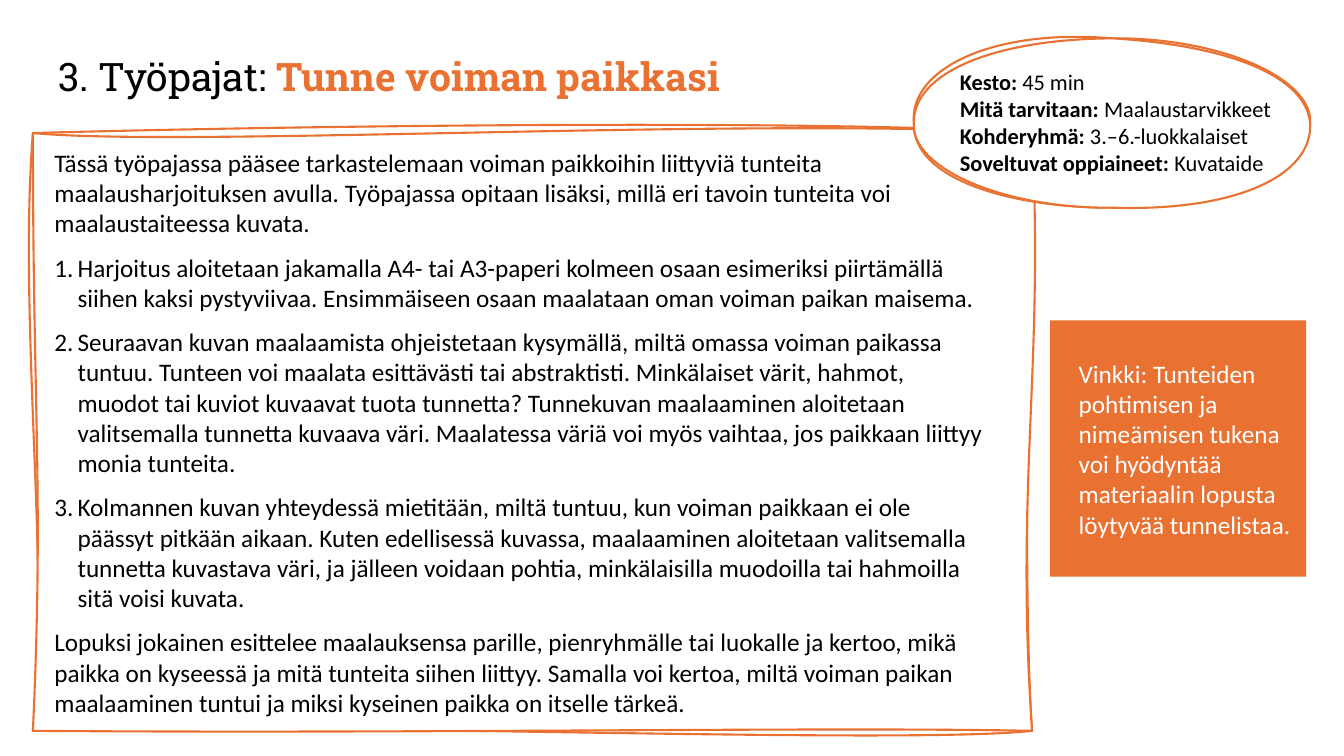
from dataclasses import dataclass

from lxml.etree import SubElement
from pptx import Presentation
from pptx.dml.color import RGBColor
from pptx.enum.shapes import MSO_SHAPE
from pptx.enum.text import MSO_ANCHOR, MSO_AUTO_SIZE, PP_ALIGN
from pptx.oxml.ns import qn
from pptx.util import Inches, Pt


@dataclass(frozen=True)
class Theme:
    accent: RGBColor = RGBColor(0xE9, 0x71, 0x32)
    ink: RGBColor = RGBColor(0, 0, 0)
    paper: RGBColor = RGBColor(255, 255, 255)
    heading_font: str = "Roboto Slab"
    text_font: str = "Calibri"
    title_size: Pt = Pt(28)
    body_size: Pt = Pt(18)
    facts_size: Pt = Pt(16)
    outline: Pt = Pt(1.5)
    paragraph_gap: Pt = Pt(10)
    number_indent: Inches = Inches(0.23)


THEME = Theme()
WIDTH, HEIGHT = Inches(13.333), Inches(7.5)

# Boxes are left, top, width, height in percent of the slide.
TITLE_BOX = (3.6, -0.93, 53.26, 22.67)
FRAME_BOX = (2.45, 17.6, 74.34, 79.07)
BODY_BOX = (3.6, 19.07, 70.5, 76.13)
BUBBLE_BOX = (68, 5.07, 29.48, 22.4)
FACTS_BOX = (70.97, 8.67, 26.18, 15.2)
TIP_PANEL = (78.13, 42.4, 19.05, 33.87)
TIP_BOX = (79.52, 46.67, 17.63, 29.6)

# Hand-drawn outlines: anchors, and two control points per side for each
# of the two strokes, in percent of the box.
FRAME_ANCHORS = [(0, 0), (100, 0), (100, 100), (0, 100)]
FRAME_STROKES = [
    [((24.8, -1.2), (79, -2.4)), ((99.6, 28.8), (99.1, 77.6)),
     ((86.8, 102.4), (24.4, 98.3)), ((1.8, 74.5), (-1.5, 31.2))],
    [((15.5, 2.4), (71.2, -2.7)), ((101.2, 39.8), (98.3, 58.3)),
     ((79, 99.3), (40.1, 100.5)), ((1.1, 59.9), (0, 47.6))],
]
BUBBLE_ANCHORS = [(0, 50), (50, 0), (100, 50), (50, 100)]
BUBBLE_STROKES = [
    [((-1.3, 18.5), (19.6, -6)), ((77.9, -0.6), (100.8, 24.4)),
     ((98.5, 78.6), (78.4, 95.2)), ((23.9, 100), (-0.5, 82.7))],
    [((-0.3, 21.4), (19.1, 0.6)), ((76.3, 3.6), (98.7, 19.6)),
     ((100.8, 80.4), (81.9, 102.4)), ((21.6, 100.6), (-1, 75.6))],
]

INTRODUCTION = (
    "Tässä työpajassa pääsee tarkastelemaan voiman paikkoihin liittyviä tunteita "
    "maalausharjoituksen avulla. Työpajassa opitaan lisäksi, millä eri tavoin "
    "tunteita voi maalaustaiteessa kuvata."
)
STEPS = [
    "Harjoitus aloitetaan jakamalla A4- tai A3-paperi kolmeen osaan esimeriksi "
    "piirtämällä siihen kaksi pystyviivaa. Ensimmäiseen osaan maalataan oman "
    "voiman paikan maisema.",
    "Seuraavan kuvan maalaamista ohjeistetaan kysymällä, miltä omassa voiman "
    "paikassa tuntuu. Tunteen voi maalata esittävästi tai abstraktisti. "
    "Minkälaiset värit, hahmot, muodot tai kuviot kuvaavat tuota tunnetta? "
    "Tunnekuvan maalaaminen aloitetaan valitsemalla tunnetta kuvaava väri. "
    "Maalatessa väriä voi myös vaihtaa, jos paikkaan liittyy monia tunteita.",
    "Kolmannen kuvan yhteydessä mietitään, miltä tuntuu, kun voiman paikkaan ei "
    "ole päässyt pitkään aikaan. Kuten edellisessä kuvassa, maalaaminen aloitetaan "
    "valitsemalla tunnetta kuvastava väri, ja jälleen voidaan pohtia, minkälaisilla "
    "muodoilla tai hahmoilla sitä voisi kuvata.",
]
CLOSING = (
    "Lopuksi jokainen esittelee maalauksensa parille, pienryhmälle tai luokalle ja "
    "kertoo, mikä paikka on kyseessä ja mitä tunteita siihen liittyy. Samalla voi "
    "kertoa, miltä voiman paikan maalaaminen tuntui ja miksi kyseinen paikka on "
    "itselle tärkeä."
)
FACTS = [
    ("Kesto:", "45 min"),
    ("Mitä tarvitaan:", "Maalaustarvikkeet"),
    ("Kohderyhmä:", "3.–6.-luokkalaiset"),
    ("Soveltuvat oppiaineet:", "Kuvataide"),
]
TIP = (
    "Vinkki: Tunteiden pohtimisen ja nimeämisen tukena voi hyödyntää materiaalin "
    "lopusta löytyvää tunnelistaa."
)


def place(box):
    """Turn a box in percent of the slide into lengths."""
    return [round(share * side / 100)
            for share, side in zip(box, (WIDTH, HEIGHT) * 2)]


def style_font(font, name, size, color):
    font.name, font.size = name, size
    font.color.rgb = color


def add_curve_path(path_list, size, anchors, controls, filled):
    """Add one closed path of cubic curves through the anchors."""
    width, height = size
    path = SubElement(path_list, qn("a:path"), w=str(width), h=str(height))
    if not filled:
        path.set("fill", "none")

    def add_command(name, *points):
        command = SubElement(path, qn(name))
        for x, y in points:
            SubElement(command, qn("a:pt"), x=str(round(x * width / 100)),
                       y=str(round(y * height / 100)))

    add_command("a:moveTo", anchors[0])
    for (first, second), end in zip(controls, anchors[1:] + anchors[:1]):
        add_command("a:cubicBezTo", first, second, end)
    add_command("a:close")


def add_sketch(slide, box, anchors, strokes):
    """Draw a loose stroke and, over it, a filled outline in one freeform."""
    left, top, width, height = place(box)
    corners = [(round(left + x * width / 100), round(top + y * height / 100))
               for x, y in anchors]
    builder = slide.shapes.build_freeform(*corners[0])
    builder.add_line_segments(corners[1:], close=True)
    shape = builder.convert_to_shape()
    path_list = shape._element.spPr.find(f".//{qn('a:pathLst')}")
    path_list.clear()
    for controls in strokes:
        add_curve_path(path_list, (width, height), anchors, controls,
                       filled=controls is strokes[-1])
    shape.shadow.inherit = False
    shape.fill.solid()
    shape.fill.fore_color.rgb = THEME.paper
    shape.line.color.rgb = THEME.accent
    shape.line.width = THEME.outline


def add_text_frame(slide, box, inset=0.06):
    frame = slide.shapes.add_textbox(*place(box)).text_frame
    frame.word_wrap = True
    frame.margin_left = frame.margin_right = Inches(inset)
    frame.margin_top = frame.margin_bottom = Inches(inset / 2)
    return frame


def next_paragraph(frame):
    """The first paragraph while the frame is empty, then a new one."""
    return frame.add_paragraph() if frame.text else frame.paragraphs[0]


def number_paragraph(paragraph):
    properties = paragraph._p.get_or_add_pPr()
    properties.set("marL", str(THEME.number_indent))
    properties.set("indent", str(-THEME.number_indent))
    SubElement(properties, qn("a:buAutoNum"), type="arabicPeriod")


def add_title(slide):
    title = slide.shapes.title
    title.left, title.top, title.width, title.height = place(TITLE_BOX)
    frame = title.text_frame
    frame.auto_size = MSO_AUTO_SIZE.NONE
    frame.vertical_anchor = MSO_ANCHOR.MIDDLE
    paragraph = frame.paragraphs[0]
    paragraph.alignment = PP_ALIGN.LEFT
    paragraph.line_spacing = 0.9
    for text, color, bold in (("3. Työpajat: ", THEME.ink, False),
                              ("Tunne voiman paikkasi", THEME.accent, True)):
        run = paragraph.add_run()
        run.text = text
        style_font(run.font, THEME.heading_font, THEME.title_size, color)
        run.font.bold = bold


def add_instructions(slide):
    frame = add_text_frame(slide, BODY_BOX)
    for text in (INTRODUCTION, *STEPS, CLOSING):
        paragraph = next_paragraph(frame)
        paragraph.text = text
        if text != INTRODUCTION:
            paragraph.space_before = THEME.paragraph_gap
        if text in STEPS:
            number_paragraph(paragraph)
        style_font(paragraph.font, THEME.text_font, THEME.body_size, THEME.ink)


def add_facts(slide):
    frame = add_text_frame(slide, FACTS_BOX)
    for label, value in FACTS:
        paragraph = next_paragraph(frame)
        style_font(paragraph.font, THEME.text_font, THEME.facts_size, THEME.ink)
        for text, bold in ((f"{label} ", True), (value, False)):
            run = paragraph.add_run()
            run.text, run.font.bold = text, bold


def add_tip(slide):
    panel = slide.shapes.add_shape(MSO_SHAPE.RECTANGLE, *place(TIP_PANEL))
    panel.shadow.inherit = False
    panel.fill.solid()
    panel.fill.fore_color.rgb = THEME.accent
    panel.line.fill.background()
    paragraph = add_text_frame(slide, TIP_BOX, inset=0.1).paragraphs[0]
    paragraph.text = TIP
    style_font(paragraph.font, THEME.text_font, THEME.body_size, THEME.paper)


def main():
    presentation = Presentation()
    presentation.slide_width, presentation.slide_height = WIDTH, HEIGHT
    slide = presentation.slides.add_slide(presentation.slide_layouts[5])
    add_sketch(slide, FRAME_BOX, FRAME_ANCHORS, FRAME_STROKES)
    add_sketch(slide, BUBBLE_BOX, BUBBLE_ANCHORS, BUBBLE_STROKES)
    add_title(slide)
    add_instructions(slide)
    add_facts(slide)
    add_tip(slide)
    presentation.save("out.pptx")


if __name__ == "__main__":
    main()
